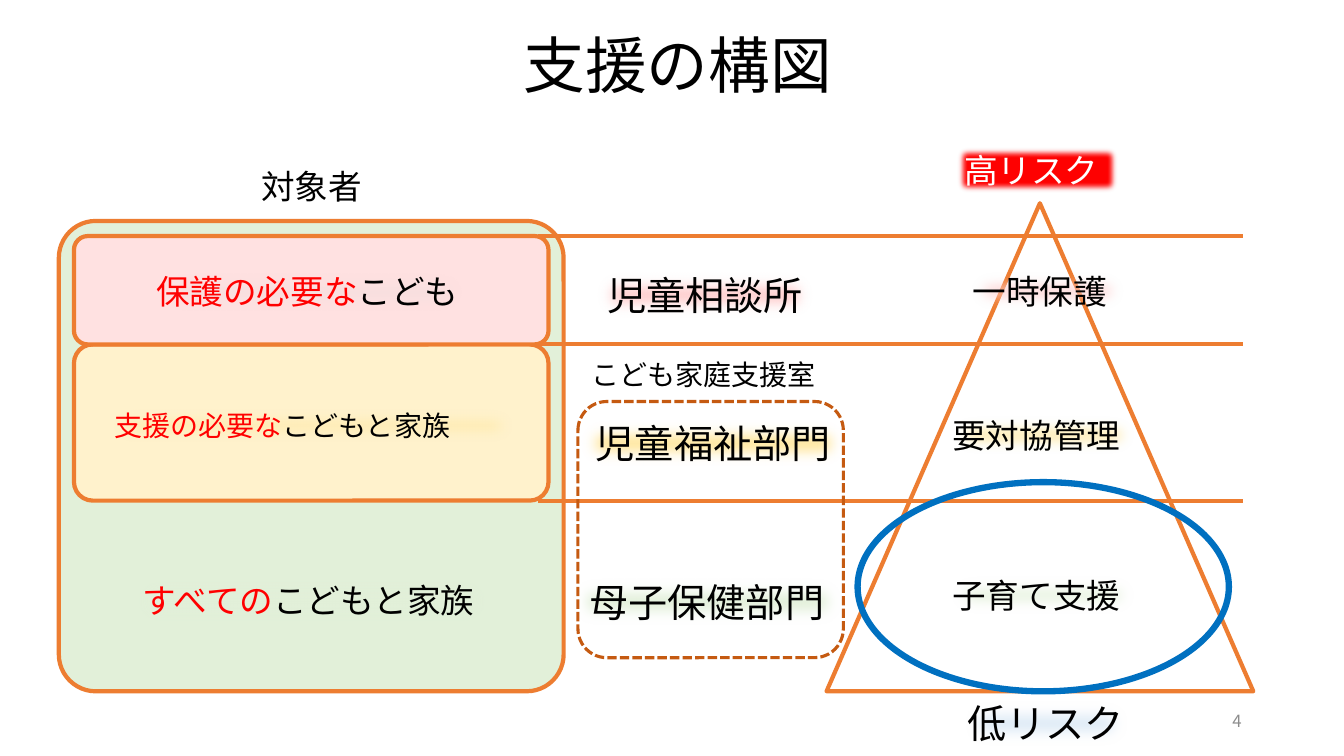
import pptx
import pptx.util
import pptx.dml.color
import pptx.enum.dml
import pptx.enum.shapes
import pptx.enum.text
import pptx.oxml
import pptx.oxml.ns
from lxml import etree

RGB = pptx.dml.color.RGBColor.from_string
ORANGE, BROWN, BLUE = RGB("ED7D31"), RGB("C55A11"), RGB("0070C0")
RED, BLACK, WHITE, GRAY = RGB("FF0000"), RGB("000000"), RGB("FFFFFF"), RGB("8C8C8C")
GREEN_TINT, CREAM, PINK_TINT = RGB("E2F0D9"), RGB("FFF2CC"), RGB("FFE1E1")
YELLOW, PINK, SILVER, PALE_BLUE = RGB("FFE699"), RGB("FFCCCC"), RGB("D9D9D9"), RGB("DEEBF7")

FONT = "Noto Sans CJK JP"
CELL = pptx.util.Inches(1 / 6)
COLUMNS, ROWS = 80, 45
SHAPES = pptx.enum.shapes.MSO_SHAPE
ALIGN = pptx.enum.text.PP_ALIGN
ANCHOR = pptx.enum.text.MSO_ANCHOR


def cells(*counts):
    """Lengths in EMU for counts of grid cells."""
    return [round(count * CELL) for count in counts]


def inside(box, left, top, width, height):
    """Box whose corner is measured from the corner of another box."""
    return box[0] + left, box[1] + top, width, height


def add_outline(slide, kind, box, fill=None, line=ORANGE, weight=3, radius=None):
    shape = slide.shapes.add_shape(kind, *cells(*box))
    shape.shadow.inherit = False
    if radius is not None:
        shape.adjustments[0] = radius / min(box[2:])
    if fill is None:
        shape.fill.background()
    else:
        shape.fill.solid()
        shape.fill.fore_color.rgb = fill
    if line is None:
        shape.line.fill.background()
    else:
        shape.line.color.rgb = line
        shape.line.width = pptx.util.Pt(weight)
    return shape


def write(shape, text, size=24, color=BLACK, lead="", align=ALIGN.LEFT,
          anchor=ANCHOR.TOP, spacing=None):
    """Write one paragraph, with an optional red lead before the text."""
    frame = shape.text_frame
    frame.word_wrap = True
    frame.vertical_anchor = anchor
    paragraph = frame.paragraphs[0]
    paragraph.alignment = align
    if spacing:
        paragraph.line_spacing = spacing
    for words, tone in ((lead, RED), (text, color)):
        if words:
            run = paragraph.add_run()
            run.text = words
            run.font.size = pptx.util.Pt(size)
            run.font.color.rgb = tone
            run.font.name = FONT
            east_asian = pptx.oxml.ns.qn("a:ea")
            etree.SubElement(run.font._element, east_asian, typeface=FONT)


def add_text(slide, box, text, **text_format):
    write(slide.shapes.add_textbox(*cells(*box)), text, **text_format)


def label_height(size):
    return 0.63 + size / 10


def add_label(slide, box, left, top, width, text, fill, size=24, soft=12, **text_format):
    """Text on a fill with blurred edges, placed from the corner of the box."""
    place = inside(box, left, top, width, label_height(size))
    shape = add_outline(slide, SHAPES.RECTANGLE, place, fill, line=None)
    effects = shape._element.spPr.find(pptx.oxml.ns.qn("a:effectLst"))
    etree.SubElement(effects, pptx.oxml.ns.qn("a:softEdge"), rad=str(pptx.util.Pt(soft)))
    write(shape, text, size=size, **text_format)


def draw_targets(slide, box):
    add_outline(slide, SHAPES.ROUNDED_RECTANGLE, box, GREEN_TINT, radius=2.2)
    for top, height, fill, radius in ((7.35, 9.3, CREAM, 1.12), (0.9, 6.45, PINK_TINT, 0.82)):
        group = inside(box, 0.9, top, box[2] - 1.8, height)
        add_outline(slide, SHAPES.ROUNDED_RECTANGLE, group, fill, radius=radius)
    add_label(slide, box, 4.4, 21.1, 21.35, "こどもと家族", GREEN_TINT, lead="すべての")
    add_label(slide, box, 2.7, 10.85, 24.85, "こどもと家族", YELLOW, size=20, lead="支援の必要な")
    add_label(slide, box, 5.2, 2.7, 19.6, "こども", SILVER, soft=15, lead="保護の必要な")
    add_text(slide, inside(box, 9.94, -3.6, 10.2, label_height(24)), "対象者", align=ALIGN.CENTER)


def draw_dividers(slide, box):
    left, top, width, height = box
    for row in (0, 6.45, height):
        start_x, start_y, end_x, end_y = cells(left, top + row, left + width, top + row)
        line = slide.shapes.add_connector(pptx.enum.shapes.MSO_CONNECTOR.STRAIGHT,
                                          start_x, start_y, end_x, end_y)
        line.line.color.rgb = ORANGE
        line.line.width = pptx.util.Pt(3)
        etree.SubElement(line._element.spPr, pptx.oxml.ns.qn("a:effectLst"))


def draw_services(slide, box):
    for left, top, width, text, fill in (
        (-0.7, 10.2, 16.75, "母子保健部門", GREEN_TINT),
        (-0.2, 0.75, 16.5, "児童福祉部門", YELLOW),
        (0.8, -8.05, 13.55, "児童相談所", PINK),
    ):
        add_label(slide, box, left, top, width, text, fill, size=28, align=ALIGN.CENTER)
    office = add_outline(slide, SHAPES.ROUNDED_RECTANGLE, box, line=BROWN,
                         weight=2.25, radius=1.72)
    office.line.dash_style = pptx.enum.dml.MSO_LINE.DASH
    dash = office._element.spPr.find(".//" + pptx.oxml.ns.qn("a:prstDash"))
    dash.set("val", "sysDash")
    add_text(slide, inside(box, 0.2, -2.9, 15.35, label_height(20)), "こども家庭支援室", size=20)


def draw_risk_levels(slide, box):
    add_label(slide, box, 7.6, -3.5, 9.9, "高リスク", RED, color=WHITE, soft=5)
    add_label(slide, box, 7.8, 29.25, 10.6, "低リスク", PALE_BLUE, size=28)
    add_label(slide, box, 8.1, 3.7, 10.1, "一時保護", PINK)
    add_label(slide, box, 6.9, 12.3, 12, "要対協管理", YELLOW)
    add_label(slide, box, 6.9, 21.8, 12, "子育て支援", GREEN_TINT)
    add_outline(slide, SHAPES.OVAL, inside(box, 1.85, 16.6, 22.1, 12.45), line=BLUE, weight=4.5)


def draw_support_slide(slide):
    pyramid = (49.2, 12.1, 25.4, 29.05)
    draw_targets(slide, (3.5, 13.15, 30.05, 28))
    add_outline(slide, SHAPES.ISOSCELES_TRIANGLE, pyramid, WHITE)
    draw_dividers(slide, (32, 14.05, 42, 15.75))
    add_text(slide, (29.35, 1.8, 22, 5.3), "支援の構図", size=44, align=ALIGN.CENTER, spacing=0.9)
    draw_services(slide, (34.4, 23.9, 15.8, 15.25))
    draw_risk_levels(slide, pyramid)
    add_text(slide, (56.5, 41.7, 18, 2.4), "4", size=12, color=GRAY,
             align=ALIGN.RIGHT, anchor=ANCHOR.MIDDLE)


def main():
    presentation = pptx.Presentation()
    presentation.slide_width, presentation.slide_height = cells(COLUMNS, ROWS)
    draw_support_slide(presentation.slides.add_slide(presentation.slide_layouts[6]))
    presentation.save("out.pptx")


if __name__ == "__main__":
    main()
